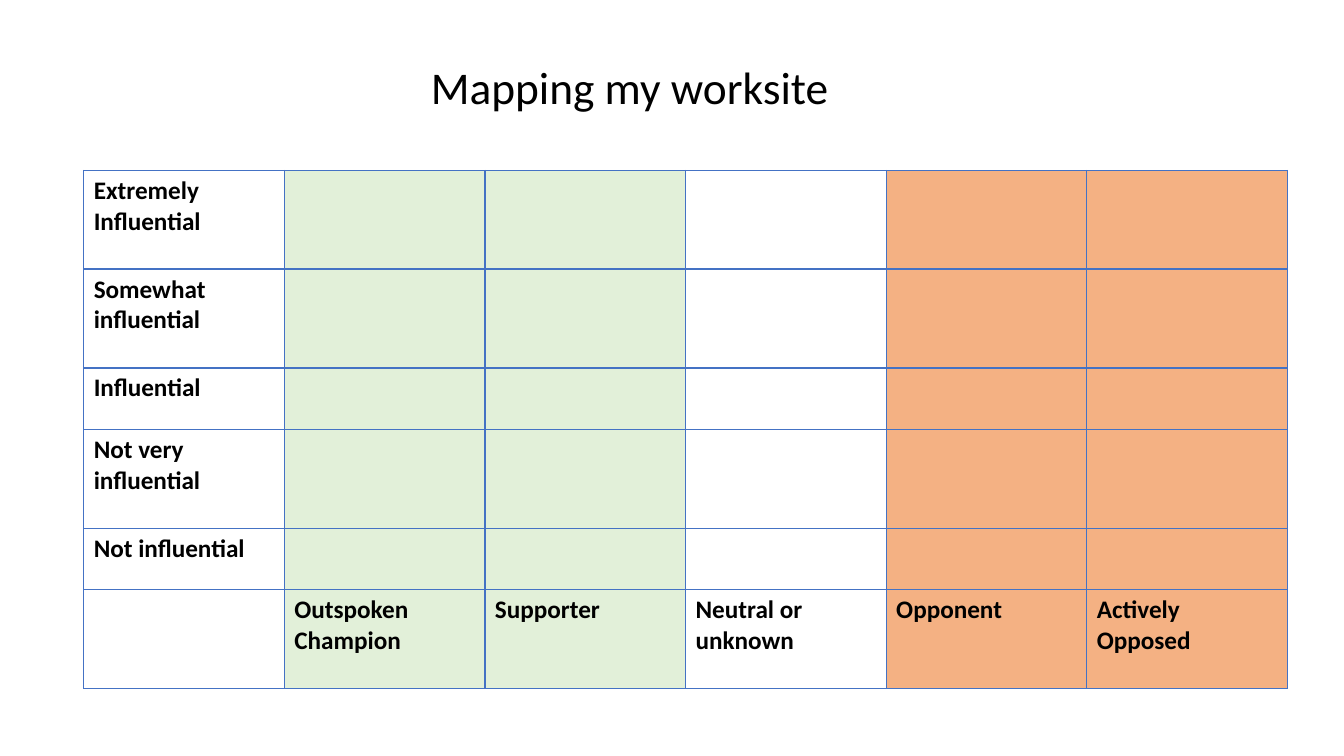
from lxml.etree import SubElement
from pptx import Presentation
from pptx.dml.color import RGBColor
from pptx.enum.text import MSO_ANCHOR, MSO_AUTO_SIZE, PP_ALIGN
from pptx.oxml.ns import qn
from pptx.util import Pt

PX = 9144  # EMU per px, at 100 px to the inch
FONT = "Calibri"
BLACK = RGBColor(0x00, 0x00, 0x00)
WHITE = RGBColor(0xFF, 0xFF, 0xFF)
GREEN = RGBColor(0xE2, 0xF0, 0xD9)
ORANGE = RGBColor(0xF4, 0xB1, 0x83)
BLUE = RGBColor(0x44, 0x72, 0xC4)

INFLUENCE_LEVELS = ["Extremely Influential", "Somewhat influential", "Influential",
                    "Not very influential", "Not influential"]
STANCES = ["Outspoken Champion", "Supporter", "Neutral or unknown", "Opponent",
           "Actively Opposed"]
COLUMN_FILLS = [WHITE, GREEN, GREEN, WHITE, ORANGE, ORANGE]
ROW_HEIGHTS = [98, 98, 61, 98, 61, 98]
COLUMN_WIDTH = 199


def format_run(run, size, bold):
    run.font.name = FONT
    run.font.size = Pt(size)
    run.font.bold = bold
    run.font.color.rgb = BLACK


def add_border(cell, side, width):
    """Draw one side (L, R, T or B) of a cell; call before filling the cell."""
    properties = cell._tc.get_or_add_tcPr()
    line = SubElement(properties, qn(f"a:ln{side}"), w=str(Pt(width)))
    fill = SubElement(line, qn("a:solidFill"))
    SubElement(fill, qn("a:srgbClr"), val=str(BLUE))


deck = Presentation()
deck.slide_width = 1333 * PX
deck.slide_height = 750 * PX
page = deck.slides.add_slide(deck.slide_layouts[5])

title = page.shapes.title
title.left, title.top, title.width, title.height = 415 * PX, 38 * PX, 419 * PX, 102 * PX
title.text_frame.text = "Mapping my worksite"
title.text_frame.auto_size = MSO_AUTO_SIZE.NONE
title.text_frame.vertical_anchor = MSO_ANCHOR.MIDDLE
para = title.text_frame.paragraphs[0]
para.alignment = PP_ALIGN.CENTER
para.line_spacing = 0.9
format_run(para.runs[0], 32.4, False)

row_count, column_count = len(ROW_HEIGHTS), len(COLUMN_FILLS)
frame = page.shapes.add_table(row_count, column_count, 83 * PX, 169 * PX,
                              column_count * COLUMN_WIDTH * PX, sum(ROW_HEIGHTS) * PX)
table = frame.table
table.first_row = False
table.horz_banding = False
for column in table.columns:
    column.width = COLUMN_WIDTH * PX
for row, height in zip(table.rows, ROW_HEIGHTS):
    row.height = height * PX

labels = [[level] + [""] * len(STANCES) for level in INFLUENCE_LEVELS] + [[""] + STANCES]
for row_index, row_labels in enumerate(labels):
    for column_index, label in enumerate(row_labels):
        cell = table.cell(row_index, column_index)
        for side in "LRTB":
            add_border(cell, side, 2 if row_index == 0 and side == "B" else 1)
        cell.fill.solid()
        cell.fill.fore_color.rgb = COLUMN_FILLS[column_index]
        if label:
            cell.text_frame.text = label
            format_run(cell.text_frame.paragraphs[0].runs[0], 18, True)

deck.save("out.pptx")
